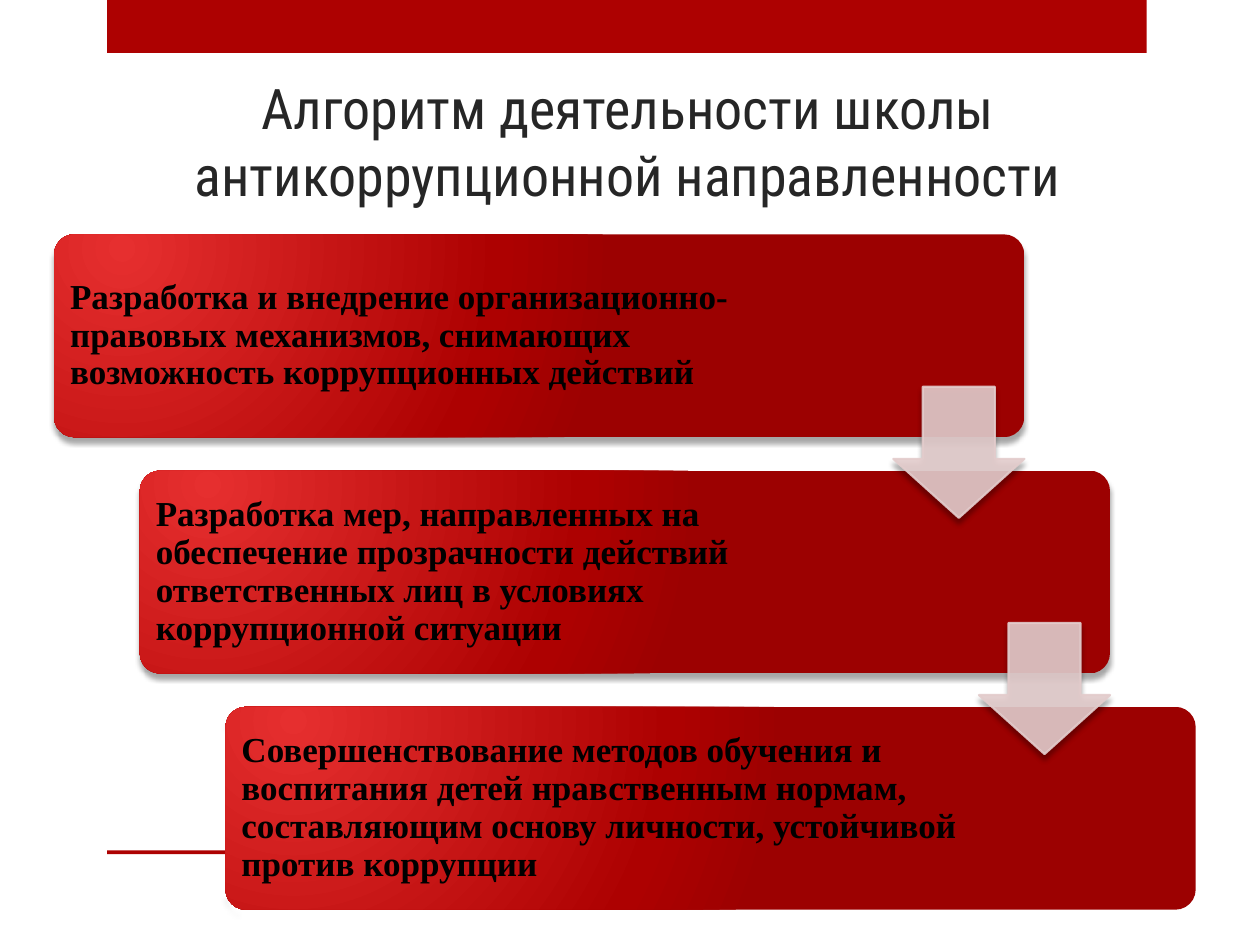
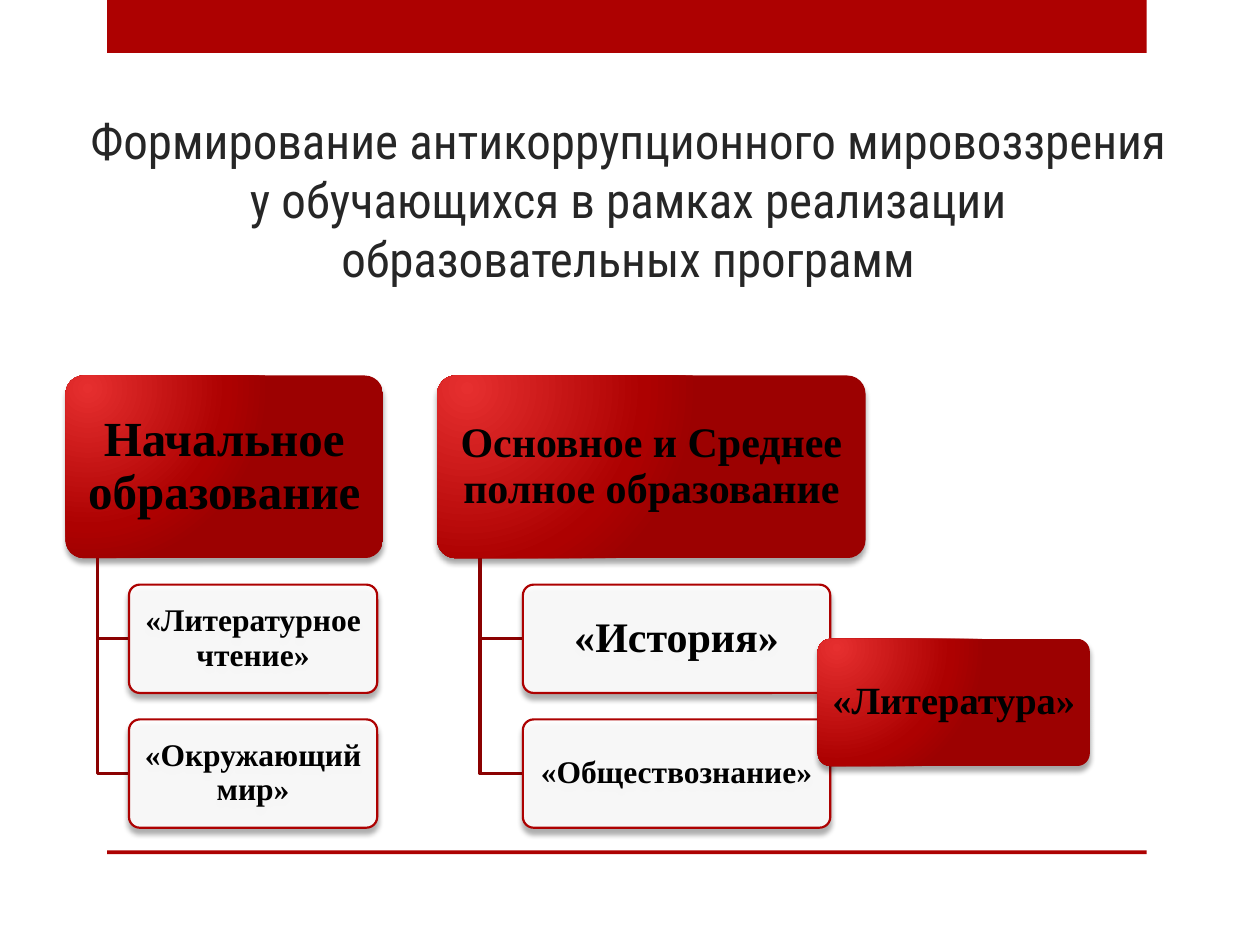
from lxml import etree
from pptx import Presentation
from pptx.dml.color import RGBColor
from pptx.enum.shapes import MSO_SHAPE as Preset
from pptx.enum.text import MSO_ANCHOR as Anchor, MSO_AUTO_SIZE as AutoSize, PP_ALIGN as Align
from pptx.oxml import parse_xml
from pptx.oxml.ns import nsdecls, qn
from pptx.util import Inches, Pt

# Shared look
RED, DARK_RED, PALE_RED = "AD0101", "8B0101", "E3CCCC"
WHITE, BLACK, TITLE_GREY = "FFFFFF", "000000", "262626"
GRADIENT_STOPS = [(0, "E62F2F"), (76, RED), (100, "9C0101")]
TITLE_FONT, BODY_FONT = "Roboto Condensed", "Times New Roman"
BAND_LEFT, BAND_WIDTH = 0.85, 8.25
BANDS = [(0, 0.42), (6.75, 0.03)]  # top, height


def color(hex_text):
    return RGBColor.from_string(hex_text)


def set_all(target, values):
    for name, value in values.items():
        setattr(target, name, value)


def set_alpha(parent, percent):
    """Make the solid fill below this element partly transparent."""
    color_element = parent.find(qn("a:solidFill")).find(qn("a:srgbClr"))
    etree.SubElement(color_element, qn("a:alpha"), val=str(percent * 1000))


def add_shadow(shape):
    effects = shape.element.spPr.find(qn("a:effectLst"))
    effects.append(parse_xml(
        f'<a:outerShdw {nsdecls("a")} blurRad="{Pt(3)}" dist="{Pt(3)}" dir="5400000" '
        f'rotWithShape="0"><a:srgbClr val="{BLACK}"><a:alpha val="35000"/></a:srgbClr></a:outerShdw>'))


def fill_gradient(shape):
    shape.fill.gradient()
    properties = shape.element.spPr
    stops = "".join(f'<a:gs pos="{position * 1000}"><a:srgbClr val="{value}"/></a:gs>'
                    for position, value in GRADIENT_STOPS)
    properties.replace(properties.find(qn("a:gradFill")), parse_xml(
        f'<a:gradFill {nsdecls("a")} rotWithShape="1"><a:gsLst>{stops}</a:gsLst><a:path path="circle">'
        '<a:fillToRect l="15000" t="15000" r="100000" b="100000"/></a:path></a:gradFill>'))


def set_line(shape, hex_text, width):
    shape.line.color.rgb = color(hex_text)
    shape.line.width = Pt(width)


def add_preset(slide, preset, box, fill=None, alpha=None, line=None):
    """Add a preset shape; without a fill colour it gets the red gradient."""
    shape = slide.shapes.add_shape(preset, *map(Inches, box))
    shape.shadow.inherit = False
    if fill:
        shape.fill.solid()
        shape.fill.fore_color.rgb = color(fill)
    else:
        fill_gradient(shape)
    if alpha:
        set_alpha(shape.element.spPr, alpha)
    if line:
        set_line(shape, line, 1.25)
    else:
        shape.line.fill.background()
    return shape


def write_text(shape, text, size, font, hex_text, align, frame_format, bold=False, spacing=1.0):
    frame = shape.text_frame
    set_all(frame, {"text": text, "word_wrap": True, "auto_size": AutoSize.NONE, **frame_format})
    paragraph = frame.paragraphs[0]
    set_all(paragraph, {"alignment": align, "line_spacing": spacing})
    run_font = paragraph.runs[0].font
    set_all(run_font, {"size": Pt(size), "name": font, "bold": bold})
    run_font.color.rgb = color(hex_text)


def add_card(slide, box, text, size, align=Align.CENTER, margins=(0.05, 0.03, 0.05, 0.03), **style):
    """Rounded card with bold text; margins are left, top, right, bottom."""
    card = add_preset(slide, Preset.ROUNDED_RECTANGLE, box, **style)
    card.adjustments[0] = 0.1
    add_shadow(card)
    sides = ("margin_left", "margin_top", "margin_right", "margin_bottom")
    frame_format = dict(zip(sides, map(Inches, margins)), vertical_anchor=Anchor.MIDDLE)
    write_text(card, text, size, BODY_FONT, BLACK, align, frame_format, bold=True, spacing=0.9)


def add_titled_slide(presentation, title, box, size):
    slide = presentation.slides.add_slide(presentation.slide_layouts[5])
    for top, height in BANDS:
        add_preset(slide, Preset.RECTANGLE, (BAND_LEFT, top, BAND_WIDTH, height), fill=RED)
    placeholder = slide.shapes.title
    set_all(placeholder, dict(zip(("left", "top", "width", "height"), map(Inches, box))))
    write_text(placeholder, title, size, TITLE_FONT, TITLE_GREY, Align.CENTER,
               {"vertical_anchor": Anchor.BOTTOM})
    return slide


def add_staircase(slide, box, steps):
    """Cards stepping down to the right, with an arrow from each to the next."""
    left, top, width, height = box
    card_width, card_height, arrow_size = 7.7, 1.61, 1.04
    gaps = len(steps) - 1
    step_x, step_y = (width - card_width) / gaps, (height - card_height) / gaps
    corners = [(left + i * step_x, top + i * step_y) for i in range(len(steps))]
    for (x, y), text in zip(corners, steps):
        add_card(slide, (x, y, card_width, card_height), text, 20, Align.LEFT,
                 (0.08, 0.08, 1.8, 0.08))
    for x, y in corners[:-1]:
        arrow_box = (x + card_width - arrow_size, y + 1.21, arrow_size, arrow_size)
        arrow = add_preset(slide, Preset.DOWN_ARROW, arrow_box, PALE_RED, 90, PALE_RED)
        arrow.adjustments[0], arrow.adjustments[1] = 0.55, 0.45
        set_alpha(arrow.element.spPr.find(qn("a:ln")), 90)
        add_shadow(arrow)


def add_elbow(slide, x, top, end_x, bottom):
    builder = slide.shapes.build_freeform(Inches(x), Inches(top))
    builder.add_line_segments([(Inches(x), Inches(bottom)), (Inches(end_x), Inches(bottom))],
                              close=False)
    elbow = builder.convert_to_shape()
    elbow.shadow.inherit = False
    elbow.fill.background()
    set_line(elbow, DARK_RED, 1.75)


def add_subject_tree(slide, header_box, header, header_size, subject_width, subjects):
    """Header card with the school subjects hanging below it."""
    left, top, width, height = header_box
    subject_height, gap = 0.86, 0.21
    bottom = top + height
    trunk_x, subject_x = left + 0.1 * width, left + 0.2 * width
    add_card(slide, header_box, header, header_size)
    for i, (subject, size) in enumerate(subjects):
        y = bottom + gap + i * (subject_height + gap)
        add_elbow(slide, trunk_x, bottom, subject_x, y + subject_height / 2)
        add_card(slide, (subject_x, y, subject_width, subject_height), subject, size,
                 fill=WHITE, alpha=90, line=RED)


def build_algorithm_slide(presentation):
    slide = add_titled_slide(
        presentation, "Алгоритм деятельности школы антикоррупционной направленности",
        (0.51, 0.6, 8.95, 1.1), 32)
    add_staircase(slide, (0.43, 1.86, 9.06, 5.36), [
        "Разработка и внедрение организационно-правовых механизмов, снимающих "
        "возможность коррупционных действий",
        "Разработка мер, направленных на обеспечение прозрачности действий "
        "ответственных лиц в условиях коррупционной ситуации",
        "Совершенствование методов обучения и воспитания детей нравственным нормам, "
        "составляющим основу личности, устойчивой против коррупции",
    ])


def build_programs_slide(presentation):
    slide = add_titled_slide(
        presentation, "Формирование антикоррупционного мировоззрения у обучающихся "
        "в рамках реализации образовательных программ", (0.51, 1.15, 8.95, 1.18), 28)
    add_subject_tree(slide, (0.52, 2.98, 2.52, 1.45), "Начальное образование", 28, 1.97,
                     [("«Литературное чтение»", 18), ("«Окружающий мир»", 18)])
    add_subject_tree(slide, (3.47, 2.98, 3.4, 1.45), "Основное и Среднее полное образование",
                     24, 2.44, [("«История»", 24), ("«Обществознание»", 18)])
    add_card(slide, (6.49, 5.07, 2.16, 1.01), "«Литература»", 22)


def main():
    presentation = Presentation()
    set_all(presentation, {"slide_width": Inches(10), "slide_height": Inches(7.5)})
    build_algorithm_slide(presentation)
    build_programs_slide(presentation)
    presentation.save("out.pptx")


if __name__ == "__main__":
    main()
